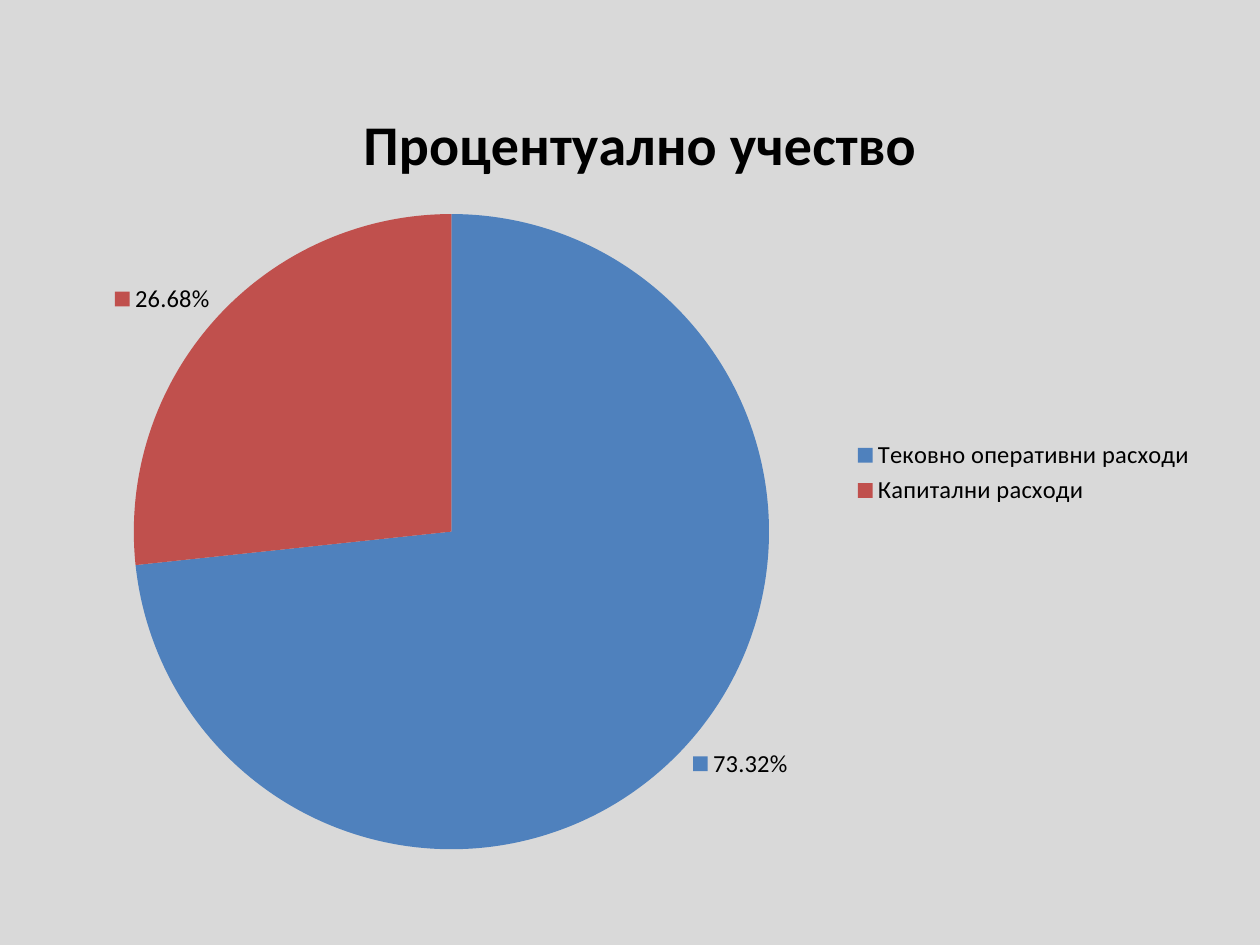
from pptx import Presentation
from pptx.chart.data import CategoryChartData
from pptx.dml.color import RGBColor
from pptx.enum.chart import XL_CHART_TYPE, XL_LABEL_POSITION, XL_LEGEND_POSITION
from pptx.oxml import parse_xml
from pptx.oxml.ns import nsdecls
from pptx.util import Pt

PX = 914400 // 126  # EMU in one pixel
COLORS = {
    "background": "D9D9D9",
    "text": "000000",
    "operating": "4F81BD",
    "capital": "C0504D",
}
FONT = "Calibri"
TITLE = "Процентуално учество"
EXPENSES = [
    ("Тековно оперативни расходи", 73.32, "operating"),
    ("Капитални расходи", 26.68, "capital"),
]


def rgb(name):
    return RGBColor.from_string(COLORS[name])


def style_font(font, size, bold=False):
    font.name = FONT
    font.size = Pt(size)
    font.bold = bold
    font.color.rgb = rgb("text")


def manual_layout(target="", **fractions):
    """Return a chart layout given as fractions of the chart's box."""
    inner = f'<c:layoutTarget val="{target}"/>' if target else ""
    modes = "".join(f'<c:{key}Mode val="edge"/>' for key in "xy")
    values = "".join(f'<c:{key} val="{value}"/>' for key, value in fractions.items())
    return parse_xml(
        f'<c:layout {nsdecls("c")}><c:manualLayout>'
        f"{inner}{modes}{values}</c:manualLayout></c:layout>"
    )


def place_chart_part(part, index, layout):
    for old_layout in part.xpath("./c:layout"):
        part.remove(old_layout)
    part.insert(index, layout)


def add_expense_pie(slide, left, top, width, height):
    data = CategoryChartData(number_format="0.00")
    data.categories = [name for name, _, _ in EXPENSES]
    data.add_series(TITLE, [value for _, value, _ in EXPENSES])
    frame = slide.shapes.add_chart(
        XL_CHART_TYPE.PIE, left * PX, top * PX, width * PX, height * PX, data
    )
    chart = frame.chart
    style_font(chart.font, 10)

    # Title
    chart.has_title = True
    run = chart.chart_title.text_frame.paragraphs[0].add_run()
    run.text = TITLE
    style_font(run.font, 32, bold=True)
    title = chart.element.xpath("./c:chart/c:title")[0]
    place_chart_part(title, 1, manual_layout(x=0.26, y=0.05))

    # Legend
    chart.has_legend = True
    chart.legend.position = XL_LEGEND_POSITION.RIGHT
    chart.legend.include_in_layout = False
    style_font(chart.legend.font, 14)

    # Slices
    plot = chart.plots[0]
    plot.vary_by_categories = True
    for index, (_, _, color) in enumerate(EXPENSES):
        fill = plot.series[0].points[index].format.fill
        fill.solid()
        fill.fore_color.rgb = rgb(color)
    plot_area = chart.element.xpath("./c:chart/c:plotArea")[0]
    place_chart_part(
        plot_area, 0, manual_layout("inner", x=0.07, y=0.19, w=0.55, h=0.76)
    )

    # Percentage labels
    labels = plot.series[0].data_labels
    labels.show_percentage = True
    labels.show_value = False
    labels.show_legend_key = True
    labels.number_format = "0.00%"
    labels.number_format_is_linked = False
    labels.position = XL_LABEL_POSITION.OUTSIDE_END
    style_font(labels.font, 14)


def main():
    presentation = Presentation()
    presentation.slide_width = 1260 * PX
    presentation.slide_height = 945 * PX
    slide = presentation.slides.add_slide(presentation.slide_layouts[6])
    slide.background.fill.solid()
    slide.background.fill.fore_color.rgb = rgb("background")
    add_expense_pie(slide, 53, 53, 1155, 840)
    presentation.save("out.pptx")


if __name__ == "__main__":
    main()
